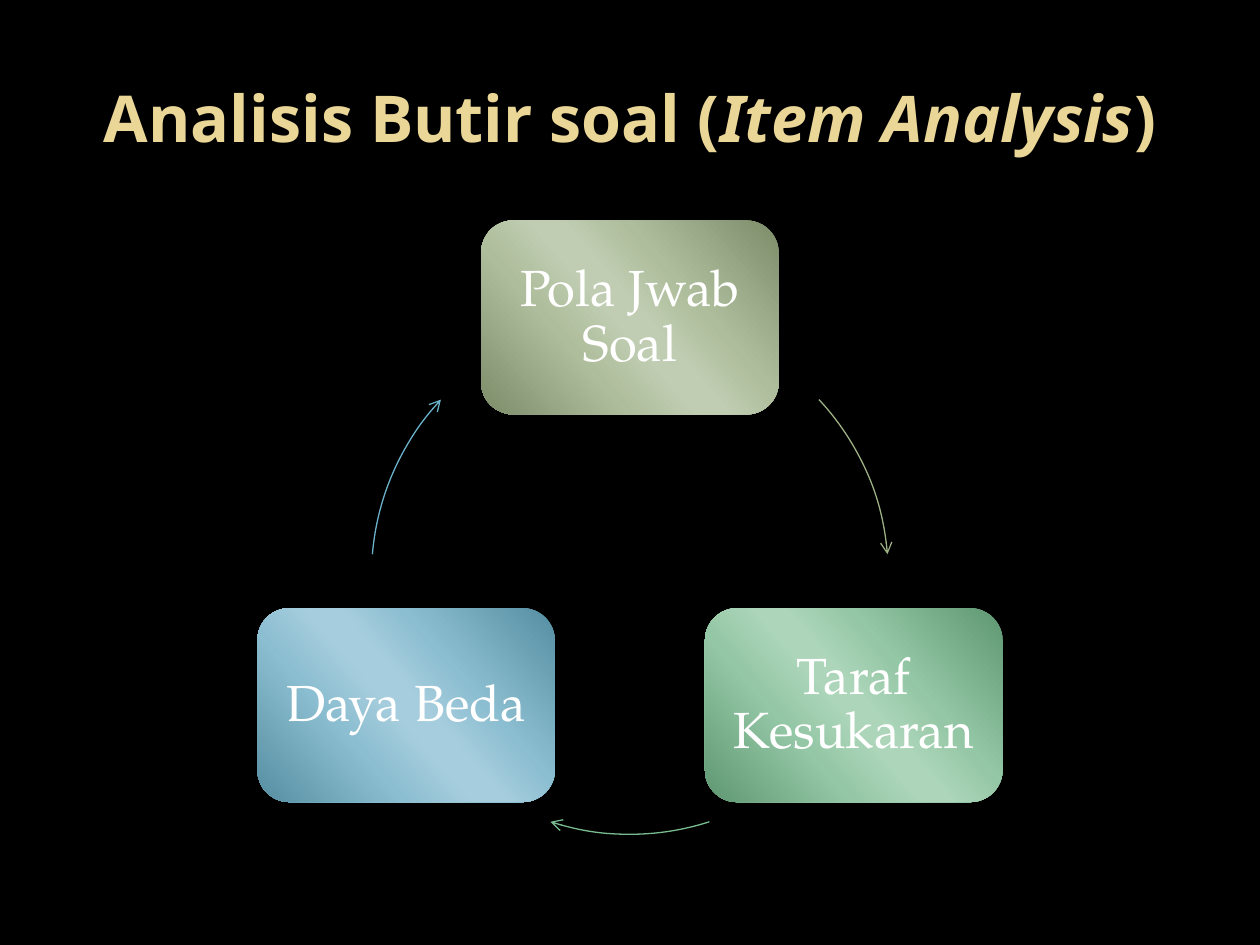
import math
from dataclasses import dataclass

from lxml import etree
from pptx import Presentation
from pptx import util as u
from pptx.dml.color import RGBColor
from pptx.enum import shapes, text
from pptx.oxml import ns


@dataclass(frozen=True)
class Theme:
    background: str = "000000"
    title_color: str = "EAD696"
    node_text: str = "FFFFFF"
    title_font: str = "Noto Sans"
    node_font: str = "TeX Gyre Pagella"
    title_size: float = 36.9
    node_size: float = 29
    arrow_width: float = 0.75
    gradient_angle: int = 139


@dataclass(frozen=True)
class Step:
    label: str
    dark: str
    middle: str
    light: str
    line: str
    arrow_start: float
    arrow_end: float


THEME = Theme()
STEPS = [
    Step("Pola Jwab Soal", "7D8D6A", "AEBD9C", "C0CDB2", "9CB084", 317, 355.2),
    Step("Taraf Kesukaran", "609773", "94C7A5", "ACD5B9", "78BC90", 72.1, 107.9),
    Step("Daya Beda", "568EA1", "8CBED1", "A6CDDD", "6BB1C9", 184.8, 223),
]


def style_run(run, font, size, color):
    run.font.name = font
    run.font.size = u.Pt(size)
    run.font.color.rgb = RGBColor.from_string(color)


def fill_gradient(shape, step):
    shape.fill.gradient()
    gradient = shape.element.spPr.find(ns.qn("a:gradFill"))
    stops = gradient.find(ns.qn("a:gsLst"))
    for stop in list(stops):
        stops.remove(stop)
    sheen = [(0, step.dark), (33, step.middle), (47, step.light),
             (53, step.light), (68, step.middle), (100, step.dark)]
    for position, color in sheen:
        stop = etree.SubElement(stops, ns.qn("a:gs"), pos=str(position * 1000))
        etree.SubElement(stop, ns.qn("a:srgbClr"), val=color)
    direction = gradient.find(ns.qn("a:lin"))
    direction.set("ang", str(THEME.gradient_angle * 60000))
    direction.set("scaled", "0")


def add_title(slide, left, top, width, height):
    box = slide.shapes.add_textbox(u.Cm(left), u.Cm(top), u.Cm(width), u.Cm(height))
    frame = box.text_frame
    frame.word_wrap = True
    frame.vertical_anchor = text.MSO_ANCHOR.MIDDLE
    paragraph = frame.paragraphs[0]
    paragraph.alignment = text.PP_ALIGN.CENTER
    for words, italic in [("Analisis Butir soal (", False), ("Item Analysis", True), (")", False)]:
        run = paragraph.add_run()
        run.text = words
        style_run(run, THEME.title_font, THEME.title_size, THEME.title_color)
        run.font.bold = True
        run.font.italic = italic


def add_node(slide, step, left, top, width, height):
    shape = slide.shapes.add_shape(
        shapes.MSO_SHAPE.ROUNDED_RECTANGLE, u.Cm(left), u.Cm(top), u.Cm(width), u.Cm(height))
    shape.shadow.inherit = False
    fill_gradient(shape, step)
    shape.line.fill.background()
    frame = shape.text_frame
    frame.text = step.label
    frame.word_wrap = True
    frame.vertical_anchor = text.MSO_ANCHOR.MIDDLE
    frame.margin_left = frame.margin_right = u.Cm(0.11)
    frame.margin_top = frame.margin_bottom = u.Cm(0.11)
    paragraph = frame.paragraphs[0]
    paragraph.alignment = text.PP_ALIGN.CENTER
    paragraph.line_spacing = 0.9
    style_run(paragraph.runs[0], THEME.node_font, THEME.node_size, THEME.node_text)


def add_arc_arrow(slide, step, left, top, diameter):
    arc = slide.shapes.add_shape(
        shapes.MSO_SHAPE.ARC, u.Cm(left), u.Cm(top), u.Cm(diameter), u.Cm(diameter))
    arc.shadow.inherit = False
    arc.adjustments[0] = step.arrow_start * 0.6
    arc.adjustments[1] = step.arrow_end * 0.6
    arc.fill.background()
    arc.line.color.rgb = RGBColor.from_string(step.line)
    arc.line.width = u.Pt(THEME.arrow_width)
    line = arc.element.spPr.find(ns.qn("a:ln"))
    etree.SubElement(line, ns.qn("a:tailEnd"), type="arrow")


def add_cycle(slide, left, top, diameter, node_width, node_height):
    radius = diameter / 2
    for index, step in enumerate(STEPS):
        angle = math.radians(-90 + index * 360 / len(STEPS))
        center_x = left + radius + radius * math.cos(angle)
        center_y = top + radius + radius * math.sin(angle)
        add_node(slide, step, center_x - node_width / 2, center_y - node_height / 2,
                 node_width, node_height)
        add_arc_arrow(slide, step, left, top, diameter)


def main():
    presentation = Presentation()
    presentation.slide_width = u.Cm(25.4)
    presentation.slide_height = u.Cm(19.05)
    slide = presentation.slides.add_slide(presentation.slide_layouts[6])
    slide.background.fill.solid()
    slide.background.fill.fore_color.rgb = RGBColor.from_string(THEME.background)
    add_title(slide, 1.27, 0.76, 22.86, 3.18)
    add_cycle(slide, 7.49, 6.4, 10.42, 6, 3.91)
    presentation.save("out.pptx")


if __name__ == "__main__":
    main()
